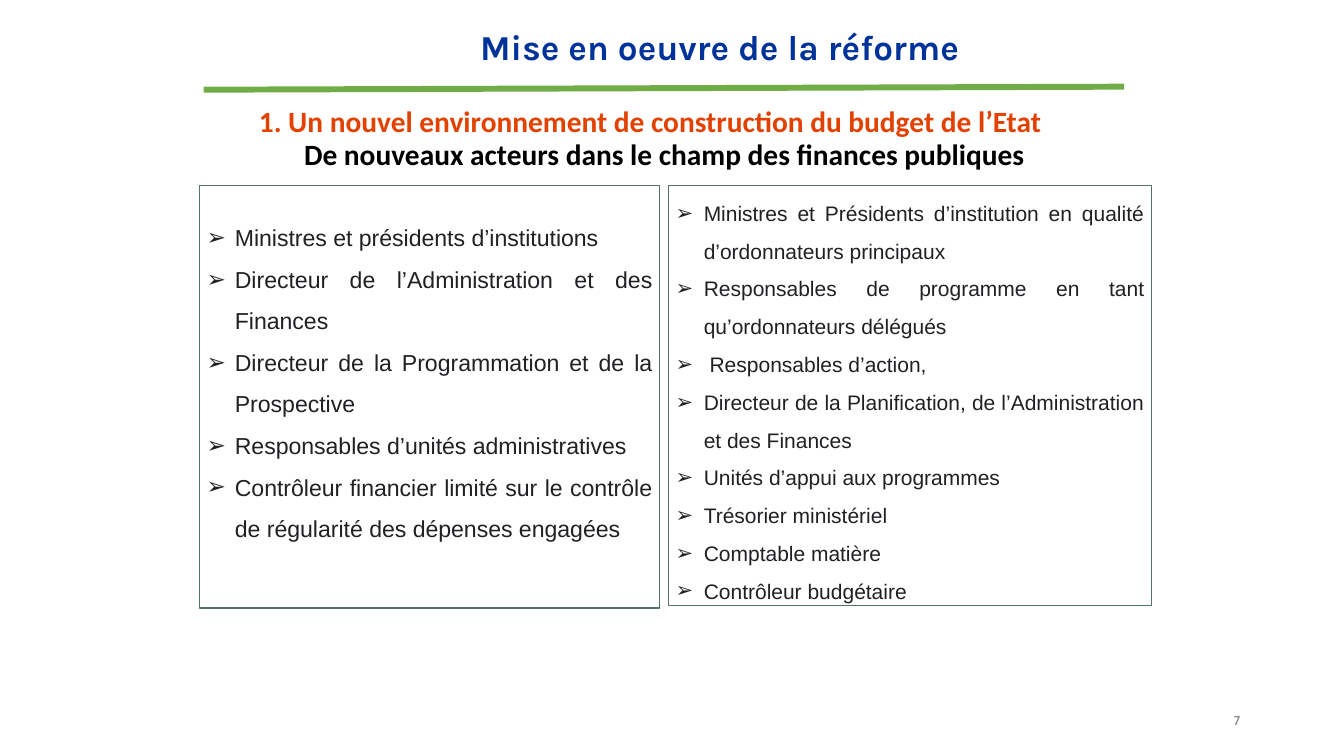
from lxml import etree
from pptx import Presentation
from pptx.dml.color import RGBColor
from pptx.enum import shapes, text
from pptx.oxml import ns
from pptx.util import Inches, Pt

BLUE = RGBColor(0x00, 0x33, 0x99)
GREEN = RGBColor(0x70, 0xAD, 0x47)
ORANGE = RGBColor(0xE3, 0x41, 0x00)
BLACK = RGBColor(0x00, 0x00, 0x00)
WHITE = RGBColor(0xFF, 0xFF, 0xFF)
INK = RGBColor(0x20, 0x21, 0x24)
BORDER = RGBColor(0x55, 0x73, 0x6D)
GRAY = RGBColor(0x76, 0x71, 0x71)

ALIGN = text.PP_ALIGN
BODY_FONT = "Arial"
INDENT = 0.28
INSET_X, INSET_Y = 0.07, 0.04

FORMER_ACTORS = [
    "Ministres et présidents d’institutions",
    "Directeur de l’Administration et des Finances",
    "Directeur de la Programmation et de la Prospective",
    "Responsables d’unités administratives",
    "Contrôleur financier limité sur le contrôle de régularité des dépenses engagées",
]
NEW_ACTORS = [
    "Ministres et Présidents d’institution en qualité d’ordonnateurs principaux",
    "Responsables de programme en tant qu’ordonnateurs délégués",
    " Responsables d’action,",
    "Directeur de la Planification, de l’Administration et des Finances",
    "Unités d’appui aux programmes",
    "Trésorier ministériel",
    "Comptable matière",
    "Contrôleur budgétaire",
]


def write(p, words, font, size, color, bold=False, align=ALIGN.CENTER, leading=0.9, spacing=0):
    p.alignment, p.line_spacing = align, leading
    r = p.add_run()
    r.text = words
    r.font.name, r.font.size, r.font.bold = font, Pt(size), bold
    r.font.color.rgb = color
    if spacing:
        r._r.get_or_add_rPr().set("spc", str(round(spacing * 100)))


def set_frame(tf, bottom=INSET_Y):
    tf.word_wrap = True
    tf.vertical_anchor = text.MSO_ANCHOR.MIDDLE
    tf.margin_left = tf.margin_right = Inches(INSET_X)
    tf.margin_top, tf.margin_bottom = Inches(INSET_Y), Inches(bottom)


def add_label(s, box, words, **style):
    tf = s.shapes.add_textbox(*map(Inches, box)).text_frame
    set_frame(tf)
    write(tf.paragraphs[0], words, **style)


def add_bullet(p):
    pPr = p._p.get_or_add_pPr()
    pPr.set("marL", str(Inches(INDENT)))
    pPr.set("indent", str(-Inches(INDENT)))
    etree.SubElement(pPr, ns.qn("a:buFont")).set("typeface", BODY_FONT)
    etree.SubElement(pPr, ns.qn("a:buChar")).set("char", "➢")


def add_panel(s, box, items, size, bottom=INSET_Y):
    """Bordered box holding a justified list of actors."""
    sp = s.shapes.add_shape(shapes.MSO_SHAPE.RECTANGLE, *map(Inches, box))
    sp.shadow.inherit = False
    sp.fill.solid()
    sp.fill.fore_color.rgb = WHITE
    sp.line.color.rgb, sp.line.width = BORDER, Pt(1)
    tf = sp.text_frame
    set_frame(tf, bottom)
    for i, item in enumerate(items):
        p = tf.add_paragraph() if i else tf.paragraphs[0]
        write(p, item, BODY_FONT, size, INK, align=ALIGN.JUSTIFY, leading=1.5)
        add_bullet(p)


def add_rule(s, start, end):
    line = s.shapes.add_connector(shapes.MSO_CONNECTOR.STRAIGHT, *map(Inches, start + end))
    line.line.color.rgb, line.line.width = GREEN, Pt(4.25)
    etree.SubElement(line._element.spPr, ns.qn("a:effectLst"))


def add_header(s):
    add_label(s, (1, 0.26, 12.28, 0.45), "Mise en oeuvre de la réforme",
              font="Karla", size=25, color=BLUE, bold=True, spacing=0.1)
    add_rule(s, (2.02, 0.89), (11.15, 0.86))
    heading = dict(font="Calibri", size=21, bold=True)
    add_label(s, (2.46, 0.94, 7.98, 0.56),
              "1. Un nouvel environnement de construction du budget de l’Etat",
              color=ORANGE, **heading)
    add_label(s, (2.57, 1.27, 8.04, 0.56),
              "De nouveaux acteurs dans le champ des finances publiques",
              color=BLACK, **heading)


def main():
    prs = Presentation()
    prs.slide_width, prs.slide_height = Inches(13.33), Inches(7.5)
    s = prs.slides.add_slide(prs.slide_layouts[6])
    add_header(s)
    add_panel(s, (1.98, 1.84, 4.56, 4.19), FORMER_ACTORS, 16.5, bottom=0.45)
    add_panel(s, (6.63, 1.84, 4.79, 4.17), NEW_ACTORS, 15)
    add_label(s, (11.4, 6.95, 0.97, 0.4), "7", font="Cabin", size=9, color=GRAY,
              align=ALIGN.RIGHT, leading=1.0)
    prs.save("out.pptx")


if __name__ == "__main__":
    main()
